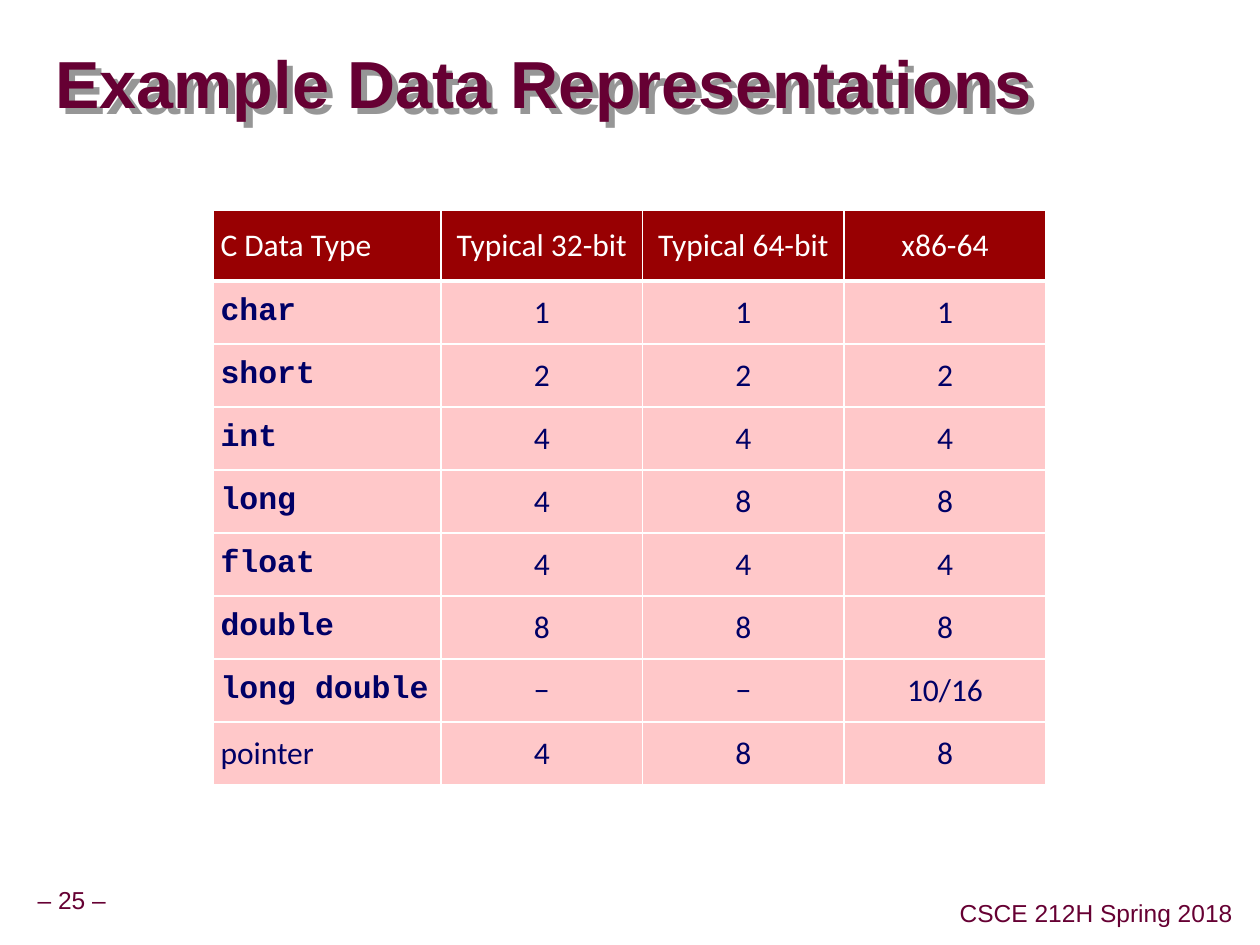
from lxml import etree
from pptx import Presentation
from pptx.dml.color import RGBColor
from pptx.enum.text import MSO_ANCHOR, MSO_AUTO_SIZE, PP_ALIGN
from pptx.oxml.ns import qn
from pptx.util import Inches, Pt

MIDDLE = MSO_ANCHOR.MIDDLE
LEFT, CENTER = PP_ALIGN.LEFT, PP_ALIGN.CENTER
NO_AUTOFIT = MSO_AUTO_SIZE.NONE

COLORS = {
    "maroon": "660033",
    "header": "980002",
    "body": "FFC8C9",
    "navy": "000066",
    "white": "FFFFFF",
    "shadow": "969696",
}

TITLE_ONLY = 5
HEADINGS = ["C Data Type", "Typical 32-bit", "Typical 64-bit", "x86-64"]
SIZES_BY_TYPE = [
    ["char", "1", "1", "1"],
    ["short", "2", "2", "2"],
    ["int", "4", "4", "4"],
    ["long", "4", "8", "8"],
    ["float", "4", "4", "4"],
    ["double", "8", "8", "8"],
    ["long double", "−", "−", "10/16"],
    ["pointer", "4", "8", "8"],
]
COLUMN_WIDTHS = [1.81, 1.6, 1.6, 1.6]
HEADER_HEIGHT, ROW_HEIGHT = 0.56, 0.5


def rgb(name):
    return RGBColor.from_string(COLORS[name])


def format_runs(paragraph, font_name, size, color, bold=False):
    for run in paragraph.runs:
        run.font.name = font_name
        run.font.size = Pt(size)
        run.font.bold = bold
        run.font.color.rgb = rgb(color)


def set_margins(target, margin):
    target.margin_left = target.margin_right = Inches(margin)
    target.margin_top = target.margin_bottom = Inches(margin)


def add_color_fill(parent, color):
    fill = etree.SubElement(parent, qn("a:solidFill"))
    etree.SubElement(fill, qn("a:srgbClr"), val=COLORS[color])


def add_title(slide, box, text):
    title = slide.shapes.title
    title.left, title.top, title.width, title.height = map(Inches, box)
    frame = title.text_frame
    frame.text = text
    frame.word_wrap = True
    frame.auto_size = NO_AUTOFIT
    frame.vertical_anchor = MIDDLE
    set_margins(frame, 0)
    paragraph = frame.paragraphs[0]
    paragraph.alignment = LEFT
    paragraph.line_spacing = 0.87
    properties = paragraph._p.get_or_add_pPr()
    properties.set("marL", str(Inches(0.13)))
    properties.set("indent", str(-Inches(0.13)))
    format_runs(paragraph, "Arial", 38, "maroon", bold=True)

    # Hard grey shadow, down and to the right
    title.shadow.inherit = False
    effects = title._element.spPr.find(qn("a:effectLst"))
    shadow = etree.SubElement(effects, qn("a:outerShdw"), dist=str(Inches(0.07)),
                              dir="2700000", algn="ctr", rotWithShape="0")
    etree.SubElement(shadow, qn("a:srgbClr"), val=COLORS["shadow"])


def set_borders(cell, widths):
    properties = cell._tc.get_or_add_tcPr()
    for side, width in zip("LRTB", widths):
        line = etree.SubElement(properties, qn(f"a:ln{side}"), w=str(Pt(width)))
        add_color_fill(line, "white")


def format_cell(cell, text, row, column):
    is_header = row == 0
    is_keyword = column == 0 and not is_header and text != "pointer"
    # A thick rule separates the header from the body
    set_borders(cell, [1, 1, 3 if row == 1 else 1, 3 if is_header else 1])
    cell.fill.solid()
    cell.fill.fore_color.rgb = rgb("header" if is_header else "body")
    cell.vertical_anchor = MIDDLE
    set_margins(cell, 0.06)
    cell.text_frame.text = text
    paragraph = cell.text_frame.paragraphs[0]
    paragraph.alignment = LEFT if column == 0 else CENTER
    format_runs(paragraph, "Courier New" if is_keyword else "Calibri", 18,
                "white" if is_header else "navy", bold=is_keyword)


def add_size_table(slide, box):
    rows = [HEADINGS] + SIZES_BY_TYPE
    table = slide.shapes.add_table(len(rows), len(HEADINGS), *map(Inches, box)).table
    table.horz_banding = False
    for column, width in zip(table.columns, COLUMN_WIDTHS):
        column.width = Inches(width)
    for row_index, texts in enumerate(rows):
        height = ROW_HEIGHT if row_index else HEADER_HEIGHT
        table.rows[row_index].height = Inches(height)
        for column_index, text in enumerate(texts):
            format_cell(table.cell(row_index, column_index), text,
                        row_index, column_index)


def add_footer(slide, box, text):
    frame = slide.shapes.add_textbox(*map(Inches, box)).text_frame
    frame.text = text
    frame.word_wrap = False
    frame.vertical_anchor = MIDDLE
    set_margins(frame, 0.05)
    paragraph = frame.paragraphs[0]
    paragraph.alignment = CENTER
    paragraph.line_spacing = 0.9
    format_runs(paragraph, "Arial", 14, "maroon")


def main():
    presentation = Presentation()
    presentation.slide_width = Inches(10)
    presentation.slide_height = Inches(7.5)
    slide = presentation.slides.add_slide(presentation.slide_layouts[TITLE_ONLY])

    # Page number and course
    add_footer(slide, (0.24, 7, 0.66, 0.31), "– 25 –")
    add_footer(slide, (7.56, 7.1, 2.28, 0.31), "CSCE 212H Spring 2018")

    # Title and table of sizes in bytes
    add_title(slide, (0.44, 0.27, 9.53, 0.85), "Example Data Representations")
    add_size_table(slide, (1.69, 1.67, 6.6, 4.56))

    presentation.save("out.pptx")


if __name__ == "__main__":
    main()
